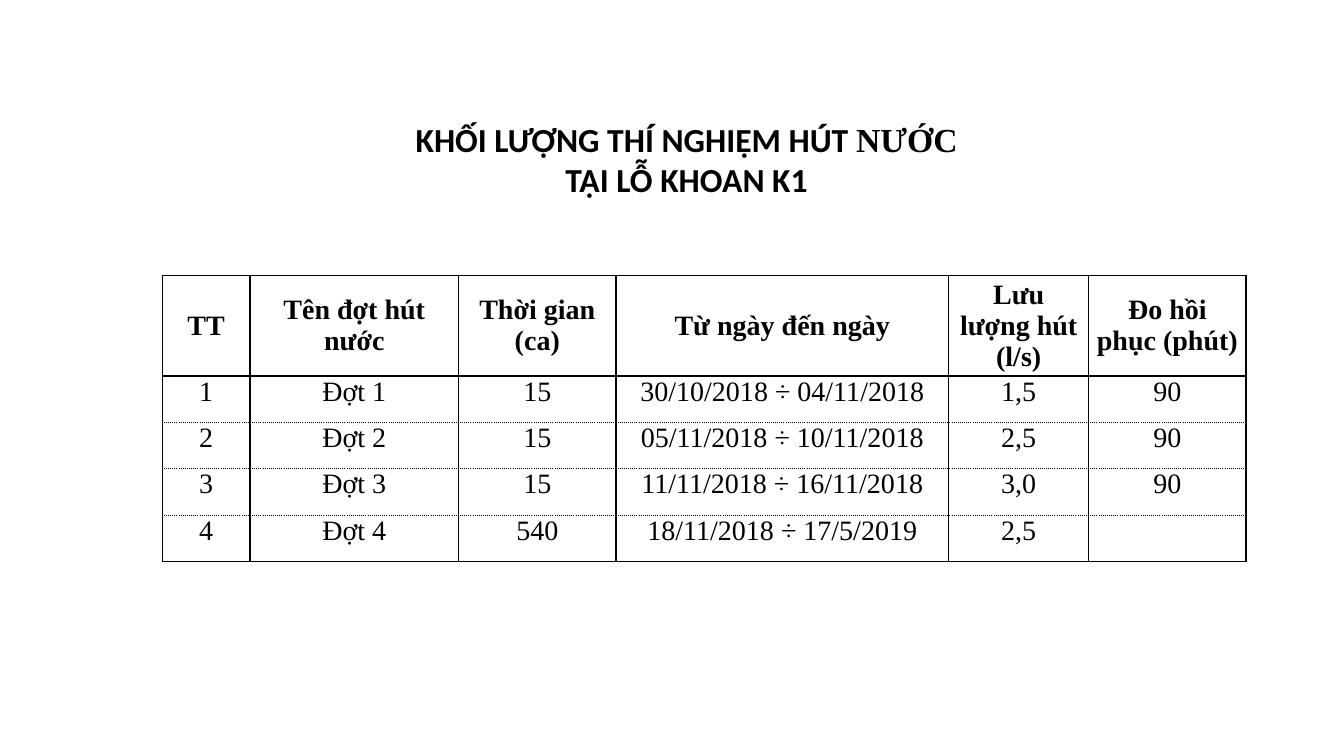
from dataclasses import dataclass
from lxml.etree import SubElement
from pptx import Presentation
from pptx.dml.color import RGBColor
from pptx.enum.text import MSO_ANCHOR, PP_ALIGN
from pptx.oxml.ns import qn
from pptx.util import Inches, Pt


@dataclass(frozen=True)
class Theme:
    ink: str = "000000"
    paper: str = "FFFFFF"
    sans: str = "Calibri"
    serif: str = "Times New Roman"
    title: int = 24
    body: int = 20
    line: int = 1


theme = Theme()


def add_run(para, text, font, size, bold):
    para.alignment = PP_ALIGN.CENTER
    run = para.add_run()
    run.text = text
    run.font.name = font
    run.font.size = Pt(size)
    run.font.bold = bold
    run.font.color.rgb = RGBColor.from_string(theme.ink)


def add_edge(cell, side, dash):
    edge = SubElement(cell._tc.get_or_add_tcPr(), qn(f"a:{side}"), w=str(Pt(theme.line)))
    fill = SubElement(edge, qn("a:solidFill"))
    SubElement(fill, qn("a:srgbClr"), val=theme.ink)
    SubElement(edge, qn("a:prstDash"), val=dash)


deck = Presentation()
deck.slide_width, deck.slide_height = Inches(13.33), Inches(7.5)
slide = deck.slides.add_slide(deck.slide_layouts[6])

# Title
box = slide.shapes.add_textbox(Inches(1.89), Inches(1.12), Inches(9.84), Inches(0.91))
frame = box.text_frame
frame.word_wrap = True
frame.vertical_anchor = MSO_ANCHOR.MIDDLE
top = frame.paragraphs[0]
add_run(top, "KHỐI LƯỢNG THÍ NGHIỆM HÚT ", theme.sans, theme.title, True)
add_run(top, "NƯỚC", theme.serif, theme.title, True)
add_run(frame.add_paragraph(), "TẠI LỖ KHOAN K1", theme.sans, theme.title, True)

# Pumping test data
rows = [
    ["TT", "Tên đợt hút nước", "Thời gian (ca)", "Từ ngày đến ngày",
     "Lưu lượng hút (l/s)", "Đo hồi phục (phút)"],
    ["1", "Đợt 1", "15", "30/10/2018 ÷ 04/11/2018", "1,5", "90"],
    ["2", "Đợt 2", "15", "05/11/2018 ÷ 10/11/2018", "2,5", "90"],
    ["3", "Đợt 3", "15", "11/11/2018 ÷ 16/11/2018", "3,0", "90"],
    ["4", "Đợt 4", "540", "18/11/2018 ÷ 17/5/2019", "2,5", ""],
]
widths = [0.87, 2.07, 1.56, 3.3, 1.39, 1.56]
heights = [0.9] + [0.46] * 4

# Table grid
table = slide.shapes.add_table(
    len(rows), len(widths), Inches(1.61), Inches(2.73),
    Inches(sum(widths)), Inches(sum(heights))).table
for col, width in zip(table.columns, widths):
    col.width = Inches(width)
for row, height in zip(table.rows, heights):
    row.height = Inches(height)

# Cells: dotted rules between data rows, solid elsewhere
last = len(rows) - 1
for r, values in enumerate(rows):
    head = r == 0
    for c, text in enumerate(values):
        cell = table.cell(r, c)
        cell.margin_left = cell.margin_right = Inches(0.07)
        cell.margin_top = cell.margin_bottom = 0
        cell.vertical_anchor = MSO_ANCHOR.MIDDLE if head else MSO_ANCHOR.TOP
        add_edge(cell, "lnL", "solid")
        add_edge(cell, "lnR", "solid")
        add_edge(cell, "lnT", "sysDot" if r > 1 else "solid")
        add_edge(cell, "lnB", "sysDot" if 0 < r < last else "solid")
        cell.fill.solid()
        cell.fill.fore_color.rgb = RGBColor.from_string(theme.paper)
        if text:
            add_run(cell.text_frame.paragraphs[0], text, theme.serif, theme.body, head)

deck.save("out.pptx")
